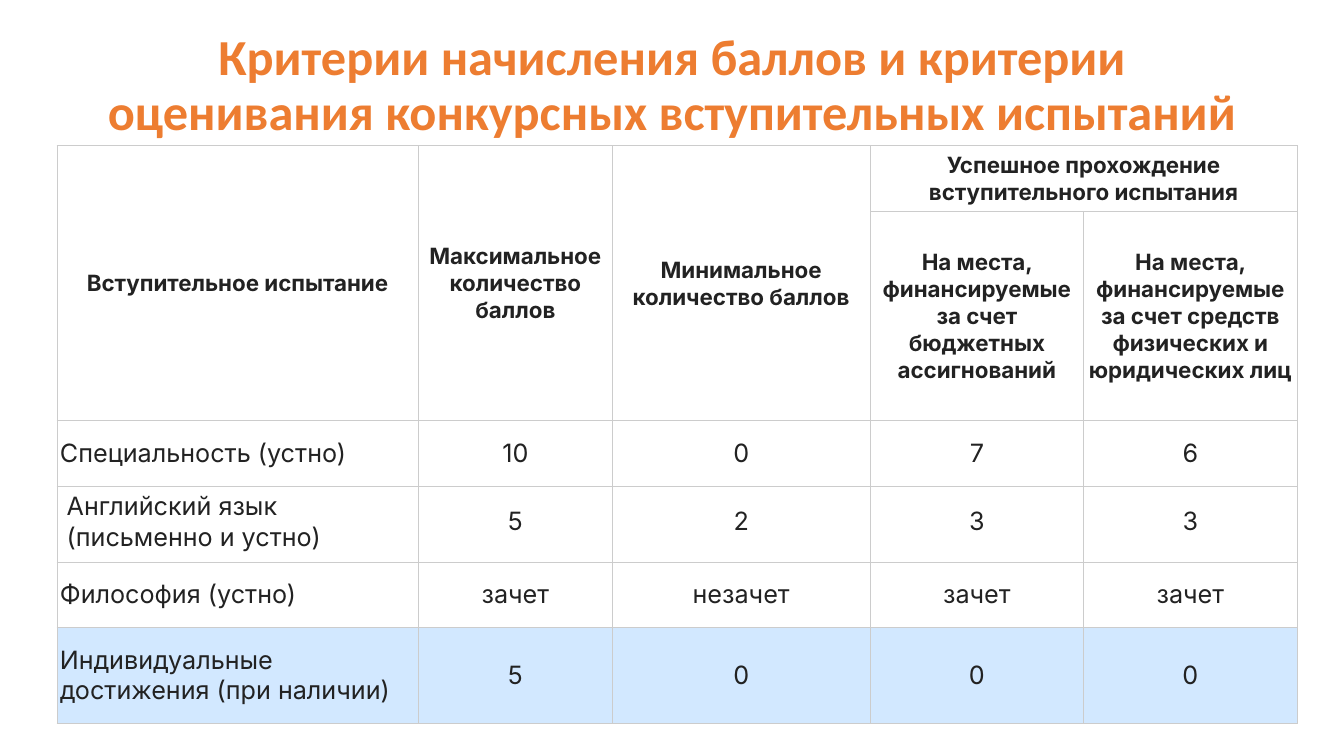
from pptx import Presentation
from pptx import util as u
from pptx.dml.color import RGBColor
from pptx.enum import text
from pptx.oxml import parse_xml
from pptx.oxml.ns import nsdecls

COLUMN_WIDTHS = [9.12, 4.88, 6.5, 5.38, 5.38]
ROW_HEIGHTS = [1.65, 5.28, 1.65, 1.91, 1.63, 2.44]
HEADER_ROWS = 2
ROOMY_ROW = 3
BONUS_ROW = 5
CRITERIA = [
    ["Вступительное испытание", "Максимальное количество баллов", "Минимальное количество баллов",
     "Успешное прохождение вступительного испытания", ""],
    ["", "", "", "На места, финансируемые за счет бюджетных ассигнований",
     "На места, финансируемые за счет средств физических и юридических лиц"],
    ["Специальность (устно)", "10", "0", "7", "6"],
    ["Английский язык (письменно и устно)", "5", "2", "3", "3"],
    ["Философия (устно)", "зачет", "незачет", "зачет", "зачет"],
    ["Индивидуальные достижения (при наличии)", "5", "0", "0", "0"],
]


def color(value):
    """Turn a hex string into a colour."""
    return RGBColor.from_string(value)


def write(frame, words, size=18, font="Inter", ink="222222", bold=False,
          align=text.PP_ALIGN.CENTER, spacing=1.0):
    """Write one formatted paragraph into a text frame."""
    para = frame.paragraphs[0]
    para.alignment = align
    para.line_spacing = spacing
    span = para.add_run()
    span.text = words
    span.font.size = u.Pt(size)
    span.font.name = font
    span.font.bold = bold
    span.font.color.rgb = color(ink)


def style_cell(cell, fill, margins):
    """Set the fill, margins, anchor and thin grey borders of a cell."""
    cell.vertical_anchor = text.MSO_ANCHOR.MIDDLE
    cell.margin_left = cell.margin_right = u.Cm(margins[0])
    cell.margin_top, cell.margin_bottom = u.Cm(margins[1]), u.Cm(margins[2])
    properties = cell._tc.get_or_add_tcPr()
    for side in ("lnL", "lnR", "lnT", "lnB"):
        properties.append(parse_xml(
            f'<a:{side} {nsdecls("a")} w="{u.Pt(0.3)}"><a:solidFill>'
            f'<a:srgbClr val="CCCCCC"/></a:solidFill></a:{side}>'))
    cell.fill.solid()
    cell.fill.fore_color.rgb = color(fill)


def add_title(page, left, top, width, height):
    """Place the heading in the title placeholder."""
    title = page.shapes.title
    title.left, title.top, title.width, title.height = map(u.Cm, (left, top, width, height))
    title.text_frame.vertical_anchor = text.MSO_ANCHOR.MIDDLE
    title.text_frame.word_wrap = True
    write(title.text_frame, "Критерии начисления баллов и критерии оценивания конкурсных вступительных испытаний",
          size=36, font="Calibri", ink="ED7D31", bold=True, spacing=0.9)


def add_criteria_table(page, left, top):
    """Place the table of tests and scores with its two header rows."""
    frame = page.shapes.add_table(
        len(ROW_HEIGHTS), len(COLUMN_WIDTHS), u.Cm(left), u.Cm(top),
        u.Cm(sum(COLUMN_WIDTHS)), u.Cm(sum(ROW_HEIGHTS)))
    table = frame.table
    table.horz_banding = table.first_row = False
    for column, width in zip(table.columns, COLUMN_WIDTHS):
        column.width = u.Cm(width)
    for row, height in zip(table.rows, ROW_HEIGHTS):
        row.height = u.Cm(height)
    for column in range(3):
        table.cell(0, column).merge(table.cell(1, column))
    table.cell(0, 3).merge(table.cell(0, 4))
    for row, entries in enumerate(CRITERIA):
        header = row < HEADER_ROWS
        margins = (0.25, 0.13, 0.25) if row == ROOMY_ROW else (0.08, 0.05, 0.03)
        for column, words in enumerate(entries):
            cell = table.cell(row, column)
            style_cell(cell, "D2E8FF" if row == BONUS_ROW else "FFFFFF", margins)
            if words:
                left_side = column == 0 and not header
                write(cell.text_frame, words, size=16 if header else 18, bold=header,
                      align=text.PP_ALIGN.LEFT if left_side else text.PP_ALIGN.CENTER)


def main():
    """Build and save the deck."""
    deck = Presentation()
    deck.slide_width, deck.slide_height = u.Cm(33.87), u.Cm(19.05)
    page = deck.slides.add_slide(deck.slide_layouts[5])
    add_title(page, 2.34, 1.02, 29.21, 2.34)
    add_criteria_table(page, 1.43, 3.67)
    deck.save("out.pptx")


if __name__ == "__main__":
    main()
